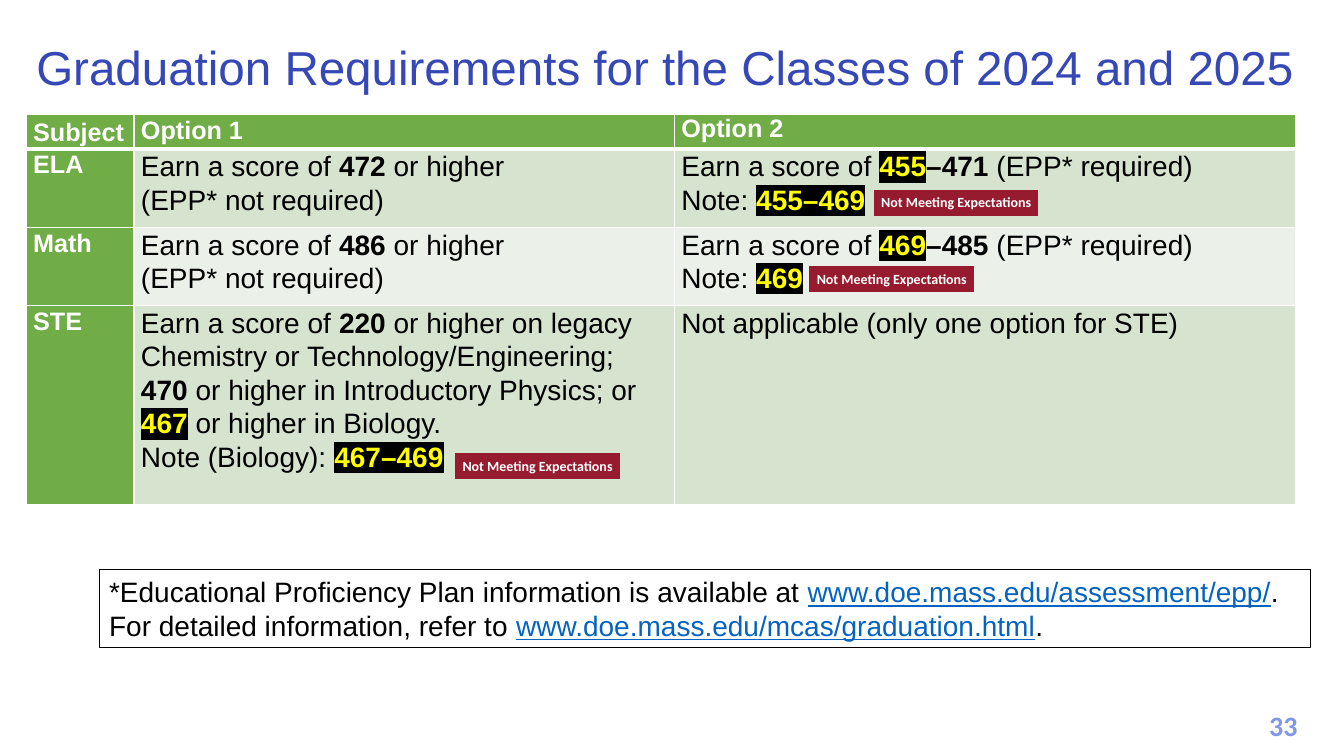
import collections
import dataclasses

import lxml.etree
import pptx
import pptx.dml.color
import pptx.enum.shapes
import pptx.enum.text
import pptx.oxml
import pptx.oxml.ns
import pptx.util

Pt = pptx.util.Pt
qn = pptx.oxml.ns.qn
Anchor = pptx.enum.text.MSO_ANCHOR
Align = pptx.enum.text.PP_ALIGN
Box = collections.namedtuple("Box", "left top width height")


@dataclasses.dataclass(frozen=True)
class Theme:
    title: str = "3647B6"
    number: str = "8397E7"
    green: str = "70AD47"
    band_dark: str = "D5E3CF"
    band_light: str = "EBF1E9"
    maroon: str = "971B2F"
    link: str = "0563C1"
    yellow: str = "FFFF00"
    black: str = "000000"
    white: str = "FFFFFF"
    main_font: str = "Arial"
    label_font: str = "Calibri"
    title_size: int = 34
    text_size: int = 20
    heading_size: int = 18
    tag_size: int = 10


THEME = Theme()
NO_TABLE_STYLE = "{2D5ABB26-0587-4C30-8999-92F81FD0307C}"
TAG_TEXT = "Not Meeting Expectations"
COLUMNS = (77, 386, 444)
ROWS = (24.5, 56, 56, 142)


def plain(text):
    return text, "plain"


def bold(text):
    return text, "bold"


def marked(text):
    return text, "marked"


def link(text):
    return text, "link"


def option_one(score):
    return [[plain("Earn a score of "), bold(score), plain(" or higher")],
            [plain("(EPP* not required)")]]


def option_two(low, high, note):
    return [[plain("Earn a score of "), marked(low), bold(f"–{high}"), plain(" (EPP* required)")],
            [plain("Note: "), marked(note)]]


HEADINGS = ("Subject", "Option 1", "Option 2")
SUBJECTS = (
    ("ELA", option_one("472"), option_two("455", "471", "455–469")),
    ("Math", option_one("486"), option_two("469", "485", "469")),
    ("STE",
     [[plain("Earn a score of "), bold("220"),
       plain(" or higher on legacy Chemistry or Technology/Engineering; "),
       bold("470 "), plain("or higher in Introductory Physics; or "),
       marked("467"), plain(" or higher in Biology.")],
      [plain("Note (Biology): "), marked("467–469")]],
     [[plain("Not applicable (only one option for STE)")]]),
)
FOOTNOTE = (
    [plain("*Educational Proficiency Plan information is available at "),
     link("www.doe.mass.edu/assessment/epp/"), plain(".")],
    [plain("For detailed information, refer to "),
     link("www.doe.mass.edu/mcas/graduation.html"), plain(".")],
)


def color(value):
    return pptx.dml.color.RGBColor.from_string(value)


def place(shape, box):
    shape.left, shape.top, shape.width, shape.height = (Pt(length) for length in box)


def line_element(tag, value, width):
    return pptx.oxml.parse_xml(
        f'<a:{tag} {pptx.oxml.ns.nsdecls("a")} w="{Pt(width)}">'
        f'<a:solidFill><a:srgbClr val="{value}"/></a:solidFill></a:{tag}>')


def mark(span):
    properties = span.font._element
    highlight = lxml.etree.Element(qn("a:highlight"))
    lxml.etree.SubElement(highlight, qn("a:srgbClr"), val=THEME.black)
    properties.find(qn("a:solidFill")).addnext(highlight)
    properties.insert(0, line_element("ln", THEME.black, 0.75))


def write(frame, paras, size, tint, font=THEME.main_font, align=Align.LEFT, spacing=1.0):
    for index, spans in enumerate(paras):
        para = frame.add_paragraph() if index else frame.paragraphs[0]
        para.alignment = align
        para.line_spacing = spacing
        para.space_before = Pt(0)
        for text, style in spans:
            span = para.add_run()
            span.text = text
            span.font.name = font
            span.font.size = Pt(size)
            span.font.bold = style in ("bold", "marked")
            tints = {"marked": THEME.yellow, "link": THEME.link}
            span.font.color.rgb = color(tints.get(style, tint))
            if style == "link":
                span.font.underline = True
            if style == "marked":
                mark(span)


def add_plain_table(page, box, columns, rows):
    shape = page.shapes.add_table(len(rows), len(columns), *(Pt(length) for length in box))
    table = shape.table
    table.first_row = table.horz_banding = False
    table._tbl.tblPr.find(qn("a:tableStyleId")).text = NO_TABLE_STYLE
    for column, width in zip(table.columns, columns):
        column.width = Pt(width)
    for row, height in zip(table.rows, rows):
        row.height = Pt(height)
    return table


def fill_cell(cell, tint, inset):
    cell.fill.solid()
    cell.fill.fore_color.rgb = color(tint)
    cell.margin_left = cell.margin_right = Pt(inset)
    cell.margin_top = cell.margin_bottom = 0


def border_cell(cell, bottom):
    properties = cell._tc.get_or_add_tcPr()
    for index, (side, width) in enumerate(zip("LRTB", (1, 1, 1, bottom))):
        properties.insert(index, line_element(f"ln{side}", THEME.white, width))


def add_title(page, box):
    title = page.shapes.title
    place(title, box)
    title.text_frame.word_wrap = True
    title.text_frame.vertical_anchor = Anchor.MIDDLE
    write(title.text_frame, [[plain("Graduation Requirements for the Classes of 2024 and 2025")]],
          THEME.title_size, THEME.title, spacing=0.9)


def add_requirements(page, box):
    table = add_plain_table(page, box, COLUMNS, ROWS)
    for column, heading in enumerate(HEADINGS):
        cell = table.cell(0, column)
        fill_cell(cell, THEME.green, 5)
        border_cell(cell, 3)
        cell.vertical_anchor = Anchor.TOP if column else Anchor.MIDDLE
        write(cell.text_frame, [[bold(heading)]], THEME.heading_size, THEME.white,
              spacing=1.0 if column == 2 else 1.07)
    for row, (subject, *options) in enumerate(SUBJECTS, 1):
        band = THEME.band_dark if row % 2 else THEME.band_light
        for column, paras in enumerate(([[bold(subject)]], *options)):
            cell = table.cell(row, column)
            fill_cell(cell, band if column else THEME.green, 5)
            border_cell(cell, 1)
            write(cell.text_frame, paras, THEME.text_size if column else THEME.heading_size,
                  THEME.black if column else THEME.white, spacing=1.07)
    for across, down in ((306.5, 241.5), (605.5, 53.5), (559.5, 108)):
        add_tag(page, Box(box.left + across, box.top + down, 117.5, 18.5))


def add_tag(page, box):
    cell = add_plain_table(page, box, [box.width], [box.height]).cell(0, 0)
    fill_cell(cell, THEME.maroon, 4)
    cell.vertical_anchor = Anchor.MIDDLE
    write(cell.text_frame, [[bold(TAG_TEXT)]], THEME.tag_size, THEME.white,
          THEME.label_font, Align.CENTER, 1.07)


def add_footnote(page, box):
    note = page.shapes.add_shape(pptx.enum.shapes.MSO_SHAPE.RECTANGLE,
                                 *(Pt(length) for length in box))
    note.shadow.inherit = False
    note.fill.background()
    note.line.color.rgb = color(THEME.black)
    note.line.width = Pt(0.75)
    note.text_frame.word_wrap = True
    note.text_frame.vertical_anchor = Anchor.TOP
    write(note.text_frame, FOOTNOTE, THEME.text_size, THEME.black)


def add_page_number(page, box):
    number = page.shapes.add_textbox(*(Pt(length) for length in box))
    number.text_frame.word_wrap = True
    write(number.text_frame, [[bold("33")]], THEME.text_size, THEME.number,
          THEME.label_font, Align.CENTER)


def main():
    deck = pptx.Presentation()
    deck.slide_width, deck.slide_height = Pt(960), Pt(540)
    page = deck.slides.add_slide(deck.slide_layouts[5])
    add_title(page, Box(18.7, 23, 941, 53.5))
    add_requirements(page, Box(18.7, 82, sum(COLUMNS), sum(ROWS)))
    add_footnote(page, Box(70.8, 407, 865, 55.5))
    add_page_number(page, Box(894.5, 502.5, 44.5, 31.5))
    deck.save("out.pptx")


if __name__ == "__main__":
    main()
